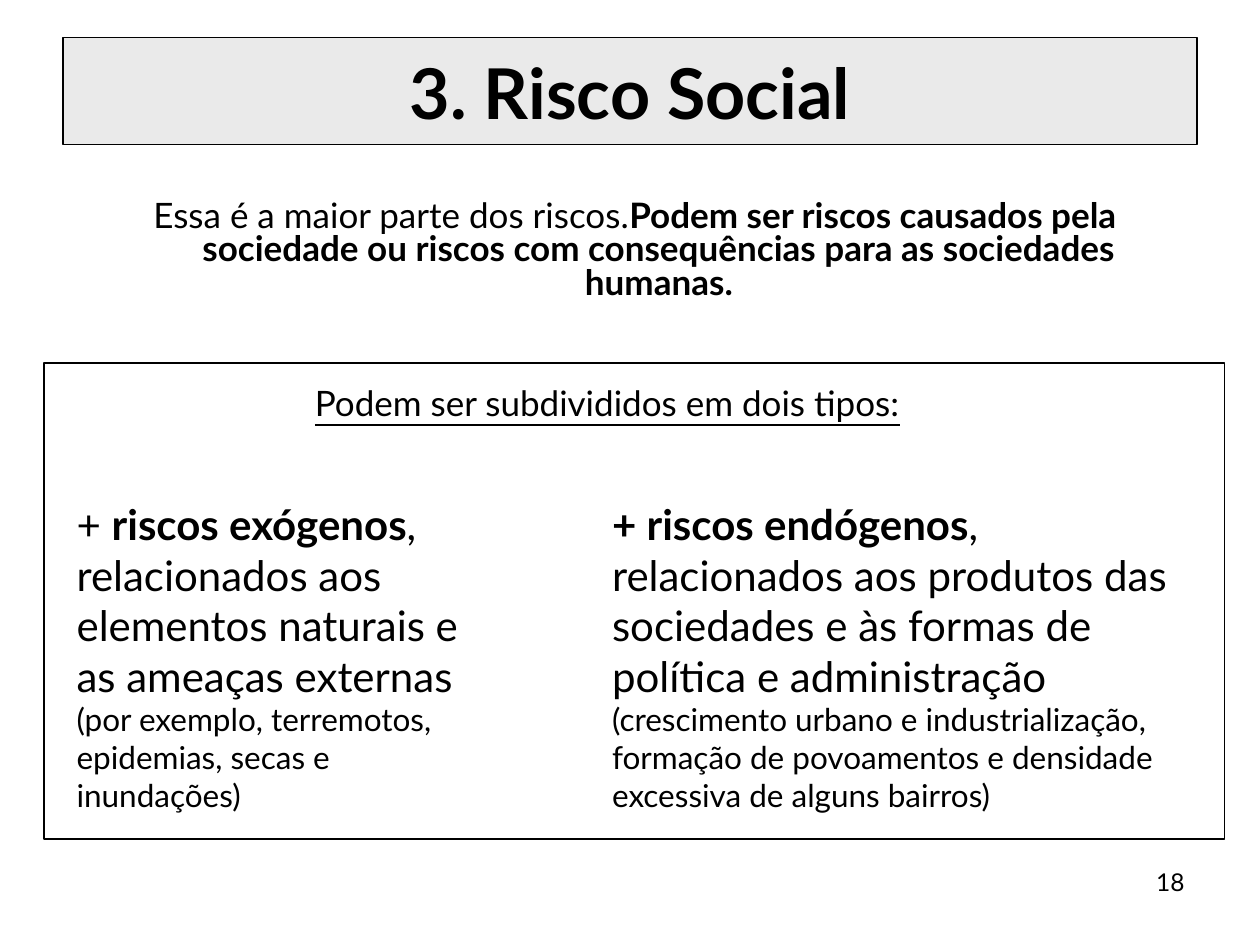
from pptx import Presentation
from pptx.dml.color import RGBColor
from pptx.enum.shapes import MSO_SHAPE
from pptx.enum.text import MSO_ANCHOR, PP_ALIGN
from pptx.util import Inches, Pt

FONT = "Lato"
BLACK = "000000"


def color(value):
    return RGBColor.from_string(value)


def add_box(slide, box, line_width, fill=None):
    shape = slide.shapes.add_shape(MSO_SHAPE.RECTANGLE, *map(Inches, box))
    shape.shadow.inherit = False
    if fill:
        shape.fill.solid()
        shape.fill.fore_color.rgb = color(fill)
    else:
        shape.fill.background()
    shape.line.color.rgb = color(BLACK)
    shape.line.width = Pt(line_width)
    return shape


def add_text(slide, box):
    frame = slide.shapes.add_textbox(*map(Inches, box)).text_frame
    frame.word_wrap = True
    return frame


def write(paragraph, runs, size, align=PP_ALIGN.LEFT):
    paragraph.alignment = align
    paragraph.font.name = FONT
    paragraph.font.size = Pt(size)
    paragraph.font.color.rgb = color(BLACK)
    for text, bold, run_size in runs:
        run = paragraph.add_run()
        run.text = text
        if bold:
            run.font.bold = True
        if run_size != size:
            run.font.size = Pt(run_size)


def tighten(paragraph):
    paragraph.line_spacing = 0.8
    paragraph.space_before = Pt(4)


def add_title(slide, box, text):
    frame = add_box(slide, box, 0.75, "EAEAEA").text_frame
    frame.vertical_anchor = MSO_ANCHOR.MIDDLE
    write(frame.paragraphs[0], [(text, True, 40)], 40, PP_ALIGN.CENTER)


def add_introduction(slide, box, runs):
    paragraph = add_text(slide, box).paragraphs[0]
    write(paragraph, runs, 20, PP_ALIGN.CENTER)
    tighten(paragraph)
    properties = paragraph._p.get_or_add_pPr()
    properties.set("marL", str(Inches(0.38)))
    properties.set("indent", str(Inches(-0.38)))


def add_risk_types(slide, box, heading, columns):
    left, top, width, height = box
    heading_box = (left + 2.05, top + 0.16, 5.59, 0.37)
    paragraph = add_text(slide, heading_box).paragraphs[0]
    write(paragraph, [(heading, False, 20)], 20)
    paragraph.font.underline = True
    tighten(paragraph)
    for offset, column_width, paragraphs in columns:
        frame = add_text(slide, (left + offset, top + 1.03, column_width, 2.6))
        for index, runs in enumerate(paragraphs):
            paragraph = frame.add_paragraph() if index else frame.paragraphs[0]
            write(paragraph, runs, 24)
    add_box(slide, box, 1)


def add_page_number(slide, box, number):
    paragraph = add_text(slide, box).paragraphs[0]
    write(paragraph, [(number, False, 14)], 14, PP_ALIGN.RIGHT)


def main():
    presentation = Presentation()
    presentation.slide_width = Inches(10)
    presentation.slide_height = Inches(7.5)
    slide = presentation.slides.add_slide(presentation.slide_layouts[6])

    add_title(slide, (0.5, 0.3, 9, 0.85), "3. Risco Social")
    add_introduction(slide, (0.59, 1.55, 8.9, 0.94), [
        ("Essa é a maior parte dos riscos.", False, 20),
        ("Podem ser riscos causados pela sociedade ou riscos com "
         "consequências para as sociedades humanas.", True, 20),
    ])
    exogenous = [[
        ("+ ", False, 24),
        ("riscos exógenos", True, 24),
        (", relacionados aos elementos naturais e as ameaças externas ", False, 24),
        ("(por exemplo, terremotos, epidemias, secas e inundações)", False, 18),
    ]]
    endogenous = [
        [("+ riscos endógenos", True, 24), (",", False, 24)],
        [
            ("relacionados aos produtos das sociedades e às formas de "
             "política e administração ", False, 24),
            ("(crescimento urbano e industrialização, formação de povoamentos "
             "e densidade excessiva de alguns bairros)", False, 18),
        ],
    ]
    add_risk_types(
        slide, (0.35, 2.88, 9.37, 3.78), "Podem ser subdivididos em dois tipos:",
        [(0.16, 3.54, exogenous), (4.41, 4.8, endogenous)],
    )
    add_page_number(slide, (7.17, 6.83, 2.33, 0.52), "18")
    presentation.save("out.pptx")


if __name__ == "__main__":
    main()
